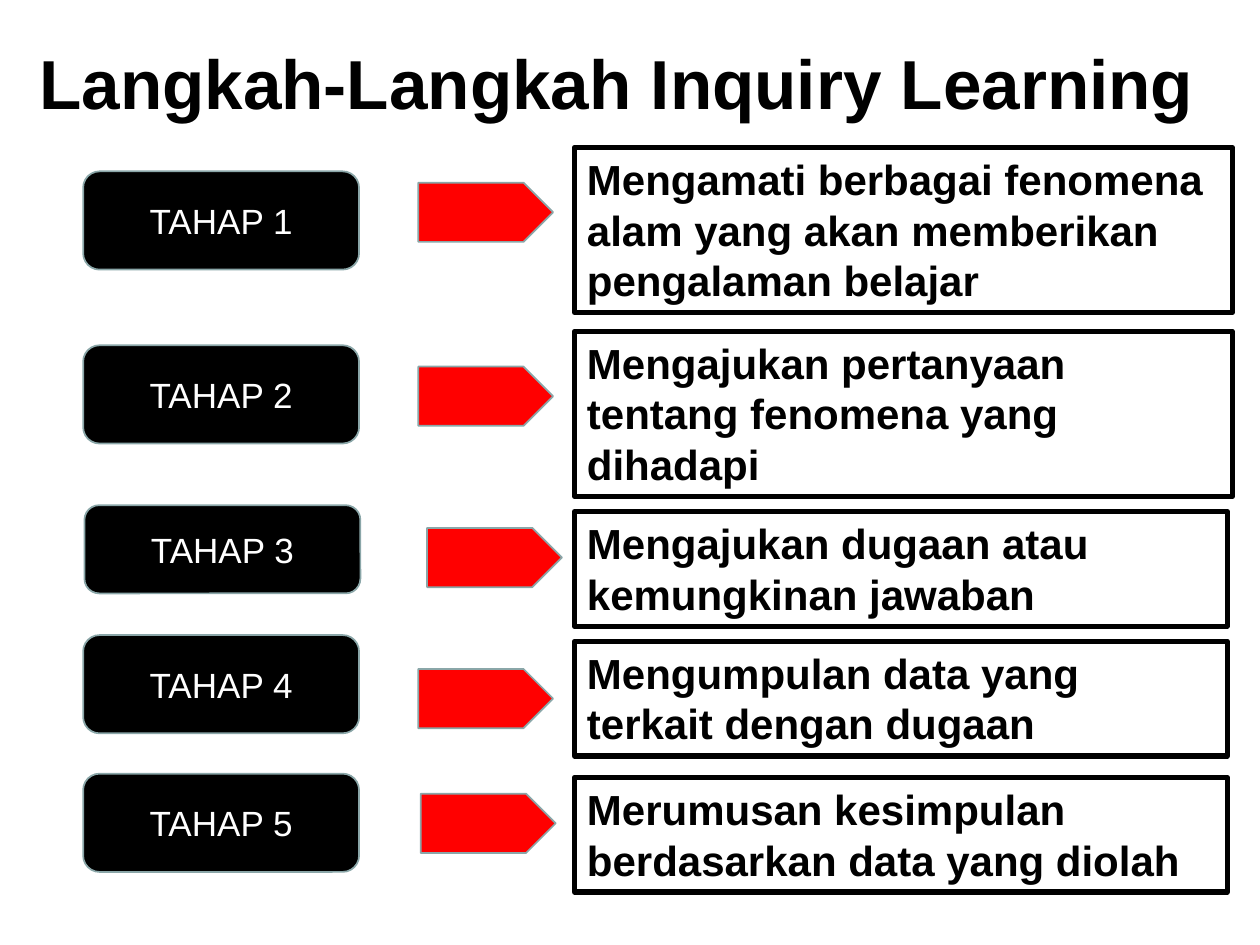
from dataclasses import dataclass

from pptx import Presentation
from pptx.dml.color import RGBColor
from pptx.enum.shapes import MSO_SHAPE
from pptx.enum.text import MSO_ANCHOR, PP_ALIGN
from pptx.util import Inches, Pt


@dataclass(frozen=True)
class Theme:
    font: str = "Arial"
    black: RGBColor = RGBColor(0, 0, 0)
    white: RGBColor = RGBColor(255, 255, 255)
    red: RGBColor = RGBColor(255, 0, 0)
    outline: RGBColor = RGBColor(0x8A, 0xA6, 0xA8)
    title: float = 39.6
    label: float = 20
    body: float = 24


theme = Theme()


def add_box(kind, box, fill, line, width):
    """Add a shadowless shape; box is left, top, width, height in inches."""
    sp = slide.shapes.add_shape(kind, *map(Inches, box))
    sp.shadow.inherit = False
    if fill is None:
        sp.fill.background()
    else:
        sp.fill.solid()
        sp.fill.fore_color.rgb = fill
    sp.line.color.rgb = line
    sp.line.width = Pt(width)
    return sp


def write(sp, text, anchor, align, color, **font):
    tf = sp.text_frame
    tf.word_wrap = True
    tf.vertical_anchor = anchor
    p = tf.paragraphs[0]
    p.alignment = align
    r = p.add_run()
    r.text = text
    r.font.color.rgb = color
    for name, value in {"name": theme.font, **font}.items():
        setattr(r.font, name, value)


prs = Presentation()
prs.slide_width, prs.slide_height = Inches(10), Inches(7.5)
slide = prs.slides.add_slide(prs.slide_layouts[6])

title = slide.shapes.add_textbox(Inches(0), Inches(0.31), Inches(9.79), Inches(0.68))
write(title, "Langkah-Langkah Inquiry Learning", MSO_ANCHOR.MIDDLE, PP_ALIGN.CENTER,
      theme.black, size=Pt(theme.title), bold=True)

# label (left, top, height), arrow (left, top), description (top, width, height), text
stages = [
    ((0.66, 1.36, 0.78), (3.32, 1.45), (1.17, 5.22, 1.31),
     "Mengamati berbagai fenomena alam yang akan memberikan pengalaman belajar"),
    ((0.66, 2.74, 0.78), (3.32, 2.91), (2.63, 5.22, 1.31),
     "Mengajukan pertanyaan tentang fenomena yang dihadapi"),
    ((0.67, 4.01, 0.7), (3.39, 4.19), (4.06, 5.18, 0.91),
     "Mengajukan dugaan atau kemungkinan jawaban"),
    ((0.66, 5.04, 0.78), (3.32, 5.31), (5.09, 5.18, 0.91),
     "Mengumpulan data yang terkait dengan dugaan"),
    ((0.66, 6.14, 0.78), (3.34, 6.3), (6.17, 5.18, 0.91),
     "Merumusan kesimpulan berdasarkan data yang diolah"),
]

for number, (label_at, arrow_at, (top, width, height), text) in enumerate(stages, 1):
    left, label_top, label_height = label_at
    label = add_box(MSO_SHAPE.ROUNDED_RECTANGLE, (left, label_top, 2.19, label_height),
                    theme.black, theme.outline, 1)
    write(label, f"TAHAP {number}", MSO_ANCHOR.MIDDLE, PP_ALIGN.CENTER,
          theme.white, size=Pt(theme.label))

    arrow = add_box(MSO_SHAPE.RIGHT_ARROW, (*arrow_at, 1.07, 0.47),
                    theme.red, theme.outline, 1)
    arrow.adjustments[0] = 1
    arrow.adjustments[1] = 0.5

    description = add_box(MSO_SHAPE.RECTANGLE, (4.56, top, width, height),
                          None, theme.black, 3)
    write(description, text, MSO_ANCHOR.TOP, PP_ALIGN.LEFT,
          theme.black, size=Pt(theme.body), bold=True)

prs.save("out.pptx")
